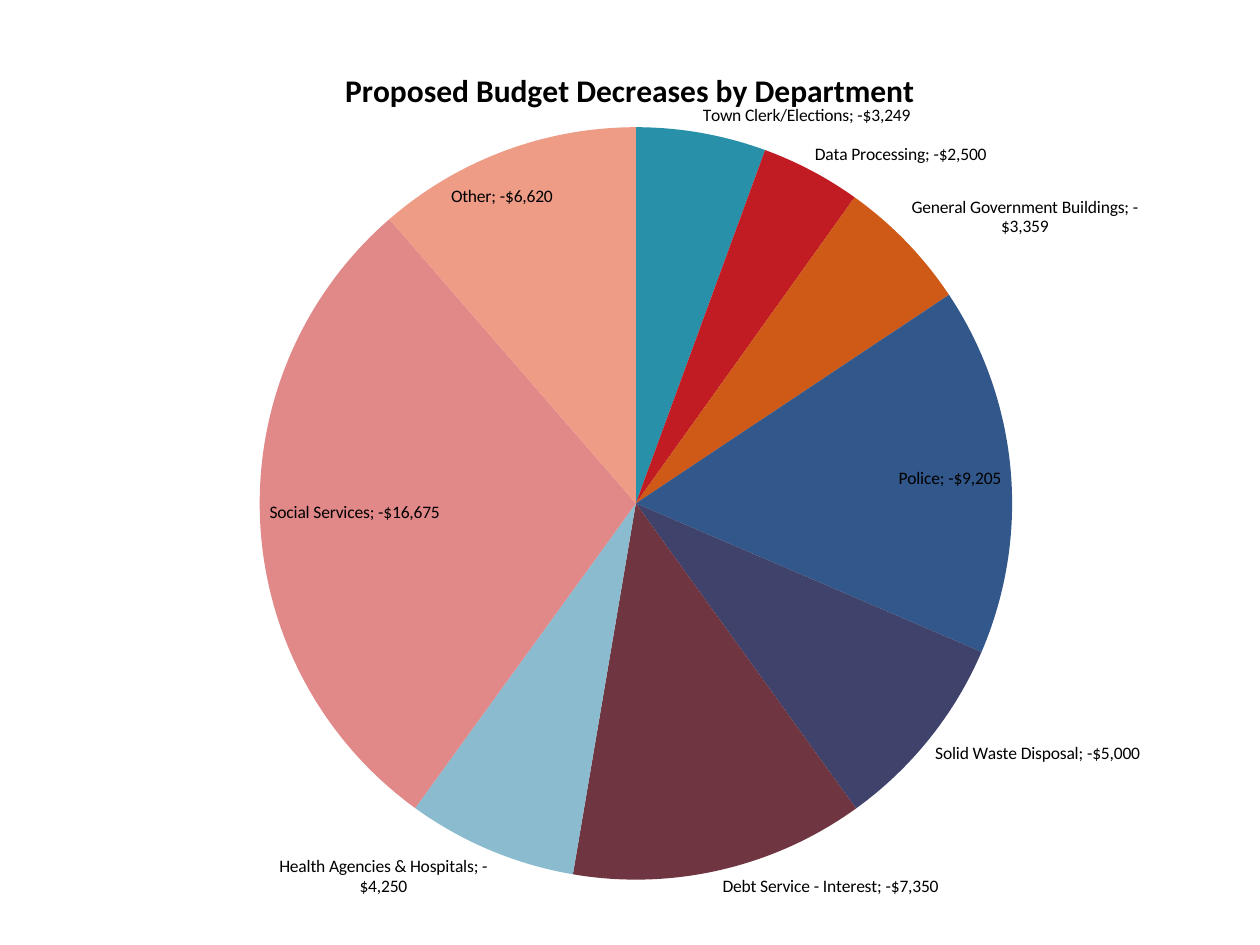
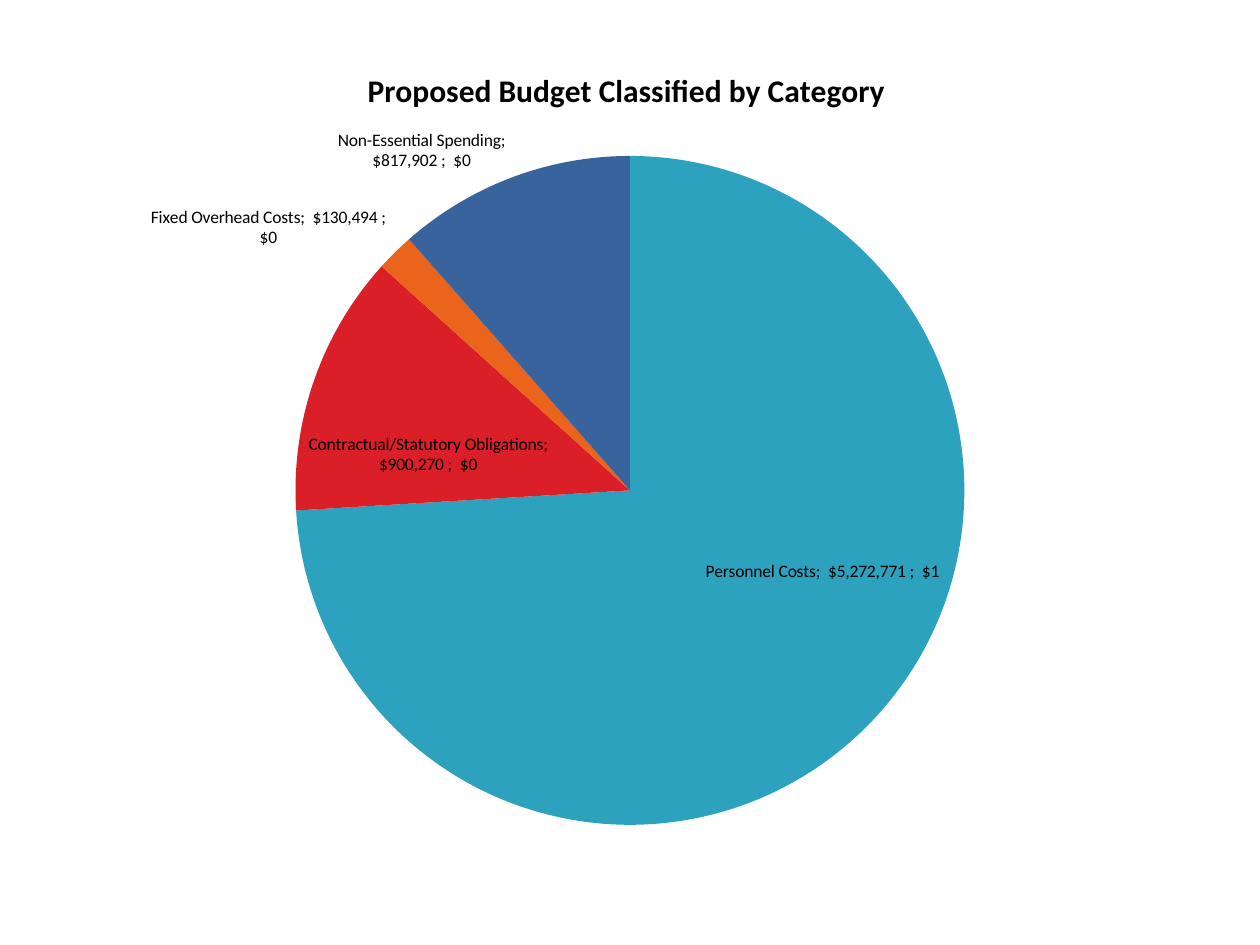
from lxml.etree import SubElement
from pptx import Presentation
from pptx.chart.data import CategoryChartData
from pptx.dml.color import RGBColor
from pptx.enum.chart import XL_CHART_TYPE, XL_LABEL_POSITION
from pptx.oxml.ns import qn
from pptx.util import Inches, Pt

FONT = "Calibri"
COLORS = {
    "text": "000000",
    "teal": "2DA2BF", "red": "DA1F28", "orange": "EB641B", "blue": "39639D",
    "deep teal": "2990AA", "deep red": "C11C23", "deep orange": "CF5916",
    "deep blue": "32578A", "indigo": "3F426A", "maroon": "6F3540",
    "pale teal": "8BBBCE", "pale red": "E18889", "pale orange": "EF9C87",
}
DECREASES = [
    ("Town Clerk/Elections", -3249, "deep teal"),
    ("Data Processing", -2500, "deep red"),
    ("General Government Buildings", -3359, "deep orange"),
    ("Police", -9205, "deep blue"),
    ("Solid Waste Disposal", -5000, "indigo"),
    ("Debt Service - Interest", -7350, "maroon"),
    ("Health Agencies & Hospitals", -4250, "pale teal"),
    ("Social Services", -16675, "pale red"),
    ("Other", -6620, "pale orange"),
]
CATEGORIES = [
    ("Personnel Costs", 5272771, "teal"),
    ("Contractual/Statutory Obligations", 900270, "red"),
    ("Fixed Overhead Costs", 130494, "orange"),
    ("Non-Essential Spending", 817902, "blue"),
]


def color(name):
    """Return the named colour."""
    return RGBColor.from_string(COLORS[name])


def style_font(font, size, bold=False):
    """Give a font the shared typeface and colour."""
    font.name = FONT
    font.size = Pt(size)
    font.bold = bold
    font.color.rgb = color("text")


def add_title(chart, text, size=18, bold=True):
    """Write the chart title."""
    chart.has_title = True
    para = chart.chart_title.text_frame.paragraphs[0]
    span = para.add_run()
    span.text = text
    style_font(span.font, size, bold)
    chart.chart_title.include_in_layout = False


def place_plot(chart, bounds):
    """Fix the inner plot area as fractions of the chart."""
    area = chart.element.find(".//" + qn("c:plotArea"))
    layout = area.find(qn("c:layout"))
    if layout is None:
        layout = SubElement(area, qn("c:layout"))
        area.insert(0, layout)
    manual = SubElement(layout, qn("c:manualLayout"))
    settings = [("layoutTarget", "inner"), ("xMode", "edge"), ("yMode", "edge")]
    settings += zip("xywh", bounds)
    for tag, value in settings:
        SubElement(manual, qn("c:" + tag)).set("val", str(value))


def add_labels(plot, number_format, percent):
    """Label each slice with its category and value."""
    plot.has_data_labels = True
    labels = plot.data_labels
    labels.show_category_name = True
    labels.show_value = True
    labels.show_percentage = percent
    labels.number_format = number_format
    labels.number_format_is_linked = False
    labels.position = XL_LABEL_POSITION.BEST_FIT
    style_font(labels.font, 10)


def add_pie_page(deck, title, slices, bounds, number_format, percent=False):
    """Add a page filled by one pie chart."""
    page = deck.slides.add_slide(deck.slide_layouts[6])
    names, values, fills = zip(*slices)
    data = CategoryChartData(number_format=number_format)
    data.categories = names
    data.add_series("Series 1", values)
    chart = page.shapes.add_chart(
        XL_CHART_TYPE.PIE, Inches(0.26), Inches(0.31),
        Inches(9.48), Inches(6.89), data).chart
    chart.has_legend = False
    style_font(chart.font, 10)
    add_title(chart, title)
    place_plot(chart, bounds)
    plot = chart.plots[0]
    plot.vary_by_categories = True
    add_labels(plot, number_format, percent)
    for index, name in enumerate(fills):
        fill = plot.series[0].points[index].format.fill
        fill.solid()
        fill.fore_color.rgb = color(name)


def main():
    """Build and save the budget deck."""
    deck = Presentation()
    deck.slide_width, deck.slide_height = Inches(10), Inches(7.5)
    add_pie_page(deck, "Proposed Budget Decreases by Department", DECREASES,
                 (0.19, 0.1, 0.63, 0.87), '"$"#,##0')
    add_pie_page(deck, "Proposed Budget Classified by Category ", CATEGORIES,
                 (0.22, 0.13, 0.56, 0.78), '_("$"* #,##0_)', percent=True)
    deck.save("out.pptx")


main()
